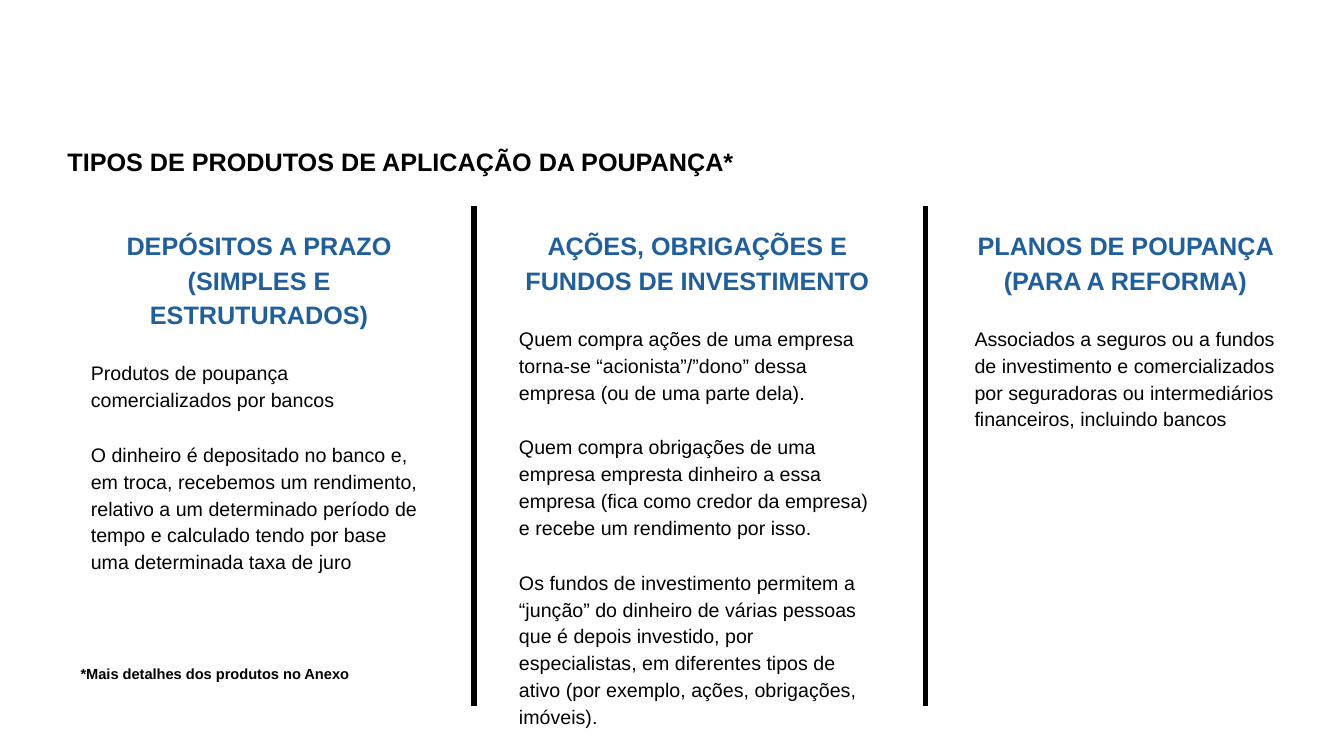
from lxml import etree
from pptx import Presentation
from pptx.dml.color import RGBColor
from pptx.enum.shapes import MSO_CONNECTOR
from pptx.enum.text import PP_ALIGN
from pptx.oxml.ns import qn
from pptx.util import Cm, Pt

BLACK = "000000"
BLUE = "215F9A"


def color(value):
    return RGBColor.from_string(value)


def add_text(frame, text, size=14, bold=False, fill=BLACK, align=PP_ALIGN.LEFT,
             spacing=1.14, after=10, first=False):
    paragraph = frame.paragraphs[0] if first else frame.add_paragraph()
    paragraph.alignment = align
    paragraph.line_spacing = spacing
    paragraph.space_before = Pt(0 if first else 10)
    paragraph.space_after = Pt(after)
    run = paragraph.add_run()
    run.text = text
    run.font.name = "Arial"
    run.font.size = Pt(size)
    run.font.bold = bold
    run.font.color.rgb = color(fill)


presentation = Presentation()
presentation.slide_width = Cm(33.87)
presentation.slide_height = Cm(19.05)
slide = presentation.slides.add_slide(presentation.slide_layouts[6])

for x in (11.94, 23.32):
    divider = slide.shapes.add_connector(
        MSO_CONNECTOR.STRAIGHT, Cm(x), Cm(5.2), Cm(x), Cm(17.78))
    divider.line.color.rgb = color(BLACK)
    divider.line.width = Pt(4)
    etree.SubElement(divider._element.spPr, qn("a:effectLst"))

columns = [
    (2.29, 8.48, "DEPÓSITOS A PRAZO (SIMPLES E ESTRUTURADOS)", [
        "Produtos de poupança comercializados por bancos",
        "O dinheiro é depositado no banco e, em troca, recebemos um rendimento, "
        "relativo a um determinado período de tempo e calculado tendo por base "
        "uma determinada taxa de juro",
    ]),
    (13.08, 8.99, "AÇÕES, OBRIGAÇÕES E FUNDOS DE INVESTIMENTO", [
        "Quem compra ações de uma empresa torna-se “acionista”/”dono” dessa "
        "empresa (ou de uma parte dela).",
        "Quem compra obrigações de uma empresa empresta dinheiro a essa empresa "
        "(fica como credor da empresa) e recebe um rendimento por isso.",
        "Os fundos de investimento permitem a “junção” do dinheiro de várias "
        "pessoas que é depois investido, por especialistas, em diferentes tipos "
        "de ativo (por exemplo, ações, obrigações, imóveis).",
    ]),
    (24.56, 7.6, "PLANOS DE POUPANÇA (PARA A REFORMA)", [
        "Associados a seguros ou a fundos de investimento e comercializados por "
        "seguradoras ou intermediários financeiros, incluindo bancos",
    ]),
]
for left, width, heading, descriptions in columns:
    column = slide.shapes.add_textbox(Cm(left), Cm(5.46), Cm(width), Cm(11.66))
    frame = column.text_frame
    frame.word_wrap = True
    frame.margin_left = frame.margin_right = Cm(0)
    frame.margin_top = frame.margin_bottom = Cm(0.25)
    add_text(frame, heading, size=18, bold=True, fill=BLUE,
             align=PP_ALIGN.CENTER, first=True)
    for description in descriptions:
        add_text(frame, description)

title = slide.shapes.add_textbox(Cm(1.45), Cm(3.66), Cm(25.6), Cm(0.94))
title.text_frame.word_wrap = True
add_text(title.text_frame, "TIPOS DE PRODUTOS DE APLICAÇÃO DA POUPANÇA*",
         size=18, bold=True, spacing=0.9, after=0, first=True)

footnote = slide.shapes.add_textbox(Cm(2.03), Cm(16.43), Cm(7.75), Cm(1.35))
frame = footnote.text_frame
frame.word_wrap = True
frame.margin_left = frame.margin_right = Cm(0)
frame.margin_top = frame.margin_bottom = Cm(0.25)
add_text(frame, "*Mais detalhes dos produtos no Anexo", size=10.5, bold=True, first=True)

presentation.save("out.pptx")
